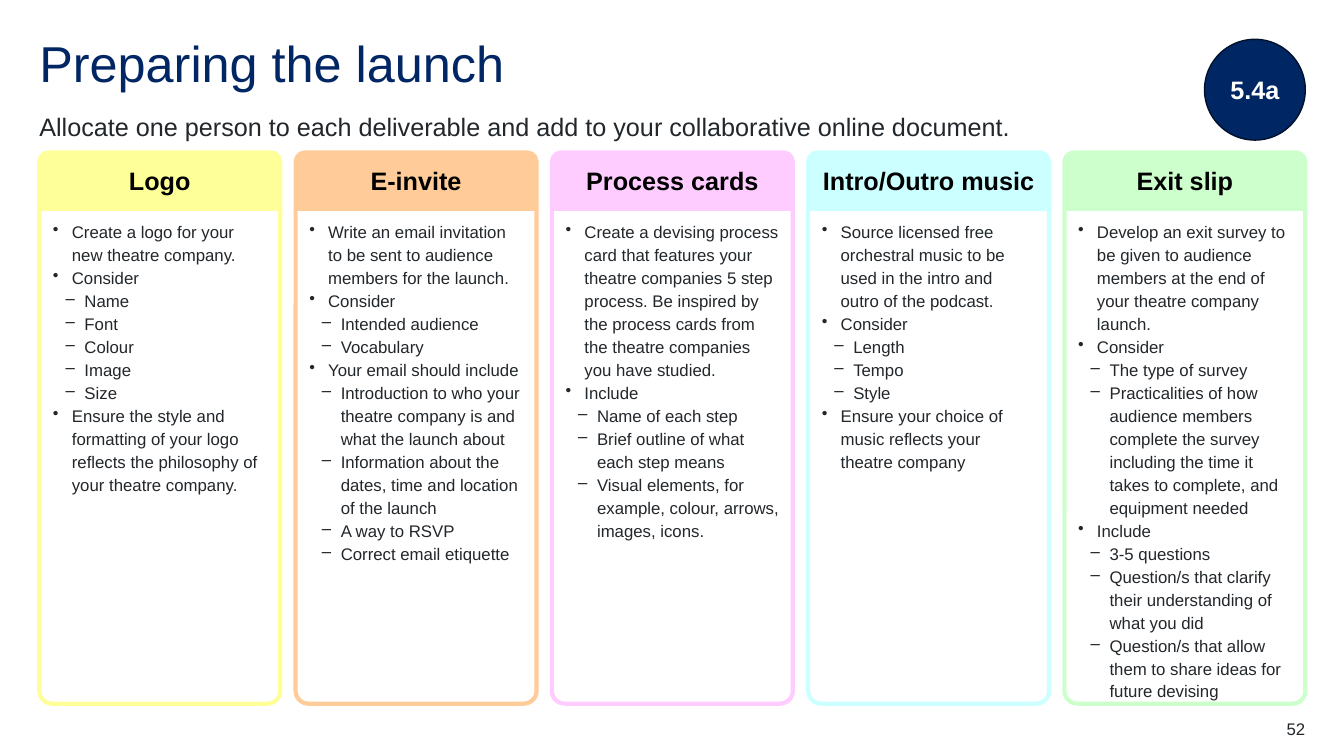
from lxml import etree
from pptx import Presentation
from pptx.dml.color import RGBColor
from pptx.enum import shapes, text
from pptx.oxml.ns import qn
from pptx.util import Pt

# Content
TITLE = "Preparing the launch"
SUBTITLE = "Allocate one person to each deliverable and add to your collaborative online document."
BADGE = "5.4a"
PAGE = "52"

# Each column: heading, colour, list of (level, line)
COLUMNS = [
    ("Logo", "FFFF99", [
        (1, "Create a logo for your new theatre company."),
        (1, "Consider"),
        (2, "Name"),
        (2, "Font"),
        (2, "Colour"),
        (2, "Image"),
        (2, "Size"),
        (1, "Ensure the style and formatting of your logo reflects the philosophy of "
            "your theatre company."),
    ]),
    ("E-invite", "FFCC99", [
        (1, "Write an email invitation to be sent to audience members for the launch."),
        (1, "Consider"),
        (2, "Intended audience"),
        (2, "Vocabulary"),
        (1, "Your email should include"),
        (2, "Introduction to who your theatre company is and what the launch about"),
        (2, "Information about the dates, time and location of the launch"),
        (2, "A way to RSVP"),
        (2, "Correct email etiquette"),
    ]),
    ("Process cards", "FFCCFF", [
        (1, "Create a devising process card that features your theatre companies 5 step "
            "process. Be inspired by the process cards from the theatre companies you "
            "have studied."),
        (1, "Include"),
        (2, "Name of each step"),
        (2, "Brief outline of what each step means"),
        (2, "Visual elements, for example, colour, arrows, images, icons."),
    ]),
    ("Intro/Outro music", "CCFFFF", [
        (1, "Source licensed free orchestral music to be used in the intro and outro of "
            "the podcast."),
        (1, "Consider"),
        (2, "Length"),
        (2, "Tempo"),
        (2, "Style"),
        (1, "Ensure your choice of music reflects your theatre company"),
    ]),
    ("Exit slip", "CCFFCC", [
        (1, "Develop an exit survey to be given to audience members at the end of your "
            "theatre company launch."),
        (1, "Consider"),
        (2, "The type of survey"),
        (2, "Practicalities of how audience members complete the survey including the "
            "time it takes to complete, and equipment needed"),
        (1, "Include"),
        (2, "3-5 questions"),
        (2, "Question/s that clarify their understanding of what you did"),
        (2, "Question/s that allow them to share ideas for future devising"),
    ]),
]

# Style and layout, in points
NAVY, INK, BLACK, WHITE = "002664", "22272B", "000000", "FFFFFF"
LEFT, WIDTH = 28.1, 904.3
COLUMN_W = 172.1
PITCH = (WIDTH - COLUMN_W) / (len(COLUMNS) - 1)
HEAD_TOP, HEAD_H = 108.9, 40.2
BODY_TOP, BODY_H = HEAD_TOP + HEAD_H, 353.5
BULLETS = {1: ("•", 13.5), 2: ("–", 22.5)}
HANGING = 13.5

TOP, MIDDLE = text.MSO_ANCHOR.TOP, text.MSO_ANCHOR.MIDDLE
ALIGN = text.PP_ALIGN
SHAPE = shapes.MSO_SHAPE


def rgb(value):
    return RGBColor.from_string(value)


def frame(sp, anchor, inset_x=0, inset_y=0):
    tf = sp.text_frame
    tf.word_wrap = True
    tf.auto_size = text.MSO_AUTO_SIZE.NONE
    tf.vertical_anchor = anchor
    tf.margin_left = tf.margin_right = Pt(inset_x)
    tf.margin_top = tf.margin_bottom = Pt(inset_y)
    return tf


def write(p, line, size, color, bold=False, align=ALIGN.LEFT, spacing=1.0):
    p.text = line
    p.alignment = align
    p.line_spacing = spacing
    p.space_before = p.space_after = Pt(0)
    p.font.name, p.font.size, p.font.bold = "Arial", Pt(size), bold
    p.font.color.rgb = rgb(color)


def add_bullet(p, level):
    char, indent = BULLETS[level]
    p.level = level
    pPr = p._p.get_or_add_pPr()
    pPr.set("marL", str(Pt(indent)))
    pPr.set("indent", str(Pt(-HANGING)))
    bullet = etree.Element(qn("a:buChar"), char=char)
    pPr.find(qn("a:defRPr")).addprevious(bullet)


def add_box(s, x, y, w, h):
    return s.shapes.add_textbox(Pt(x), Pt(y), Pt(w), Pt(h))


def add_shape(s, kind, x, y, w, h, fill, line, line_w):
    sp = s.shapes.add_shape(kind, Pt(x), Pt(y), Pt(w), Pt(h))
    sp.shadow.inherit = False
    if fill:
        sp.fill.solid()
        sp.fill.fore_color.rgb = rgb(fill)
    else:
        sp.fill.background()
    sp.line.color.rgb = rgb(line)
    sp.line.width = Pt(line_w)
    return sp


def add_column(s, x, heading, color, lines):
    head = add_shape(s, SHAPE.ROUND_2_SAME_RECTANGLE, x, HEAD_TOP, COLUMN_W, HEAD_H,
                     color, color, 3)
    tf = frame(head, MIDDLE, 7.2, 3.6)
    write(tf.paragraphs[0], heading, 18, BLACK, True, ALIGN.CENTER, 0.9)

    body = add_shape(s, SHAPE.ROUND_2_SAME_RECTANGLE, x, BODY_TOP, COLUMN_W, BODY_H,
                     None, color, 3)
    body.adjustments[0], body.adjustments[1] = 0, 0.053
    tf = frame(body, TOP, 7.2, 7.2)
    for i, (level, line) in enumerate(lines):
        p = tf.add_paragraph() if i else tf.paragraphs[0]
        write(p, line, 12, INK, spacing=1.14)
        add_bullet(p, level)


def main():
    prs = Presentation()
    prs.slide_width, prs.slide_height = Pt(960), Pt(540)
    s = prs.slides.add_slide(prs.slide_layouts[5])

    # Title and subtitle
    title = s.shapes.title
    title.left, title.top, title.width, title.height = Pt(LEFT), Pt(28.1), Pt(WIDTH), Pt(43.2)
    write(frame(title, TOP).paragraphs[0], TITLE, 36, NAVY, spacing=0.9)
    subtitle = add_box(s, LEFT, 79.2, 756, 29.5)
    write(frame(subtitle, TOP).paragraphs[0], SUBTITLE, 18, INK)

    # Page number
    page = add_box(s, LEFT + WIDTH - 56.9, 513.4, 56.9, 14.4)
    write(frame(page, TOP).paragraphs[0], PAGE, 12, INK, align=ALIGN.RIGHT)

    # Lesson badge
    badge = add_shape(s, SHAPE.OVAL, LEFT + WIDTH - 72, 28.1, 72, 72, NAVY, "00112C", 1)
    write(frame(badge, MIDDLE, 7.2, 3.6).paragraphs[0], BADGE, 18, WHITE, True, ALIGN.CENTER)

    # Deliverable columns
    for i, column in enumerate(COLUMNS):
        add_column(s, LEFT + i * PITCH, *column)

    prs.save("out.pptx")


if __name__ == "__main__":
    main()
